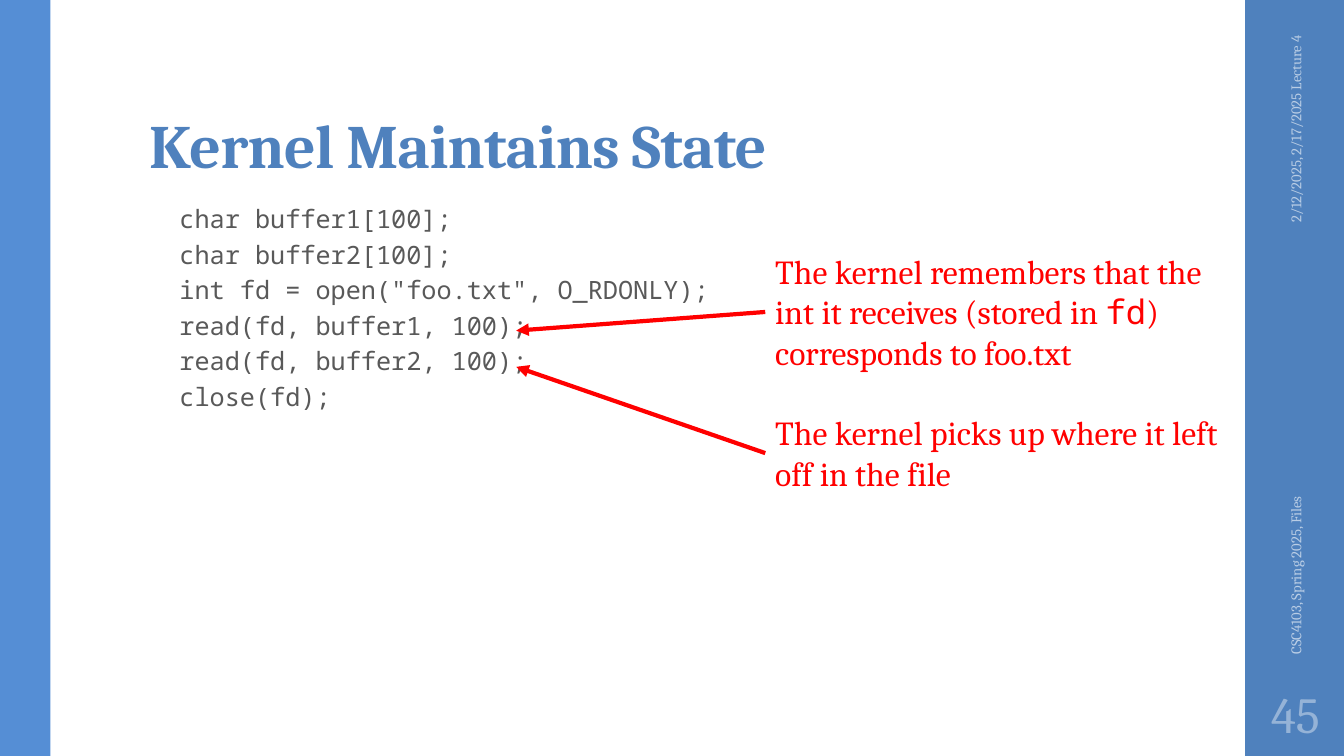
from lxml import etree
from pptx import Presentation
from pptx.dml.color import RGBColor
from pptx.enum.shapes import MSO_CONNECTOR, MSO_SHAPE
from pptx.enum.text import MSO_ANCHOR, MSO_AUTO_SIZE, PP_ALIGN
from pptx.oxml.ns import qn
from pptx.util import Pt

LEFT, CENTER, RIGHT = PP_ALIGN.LEFT, PP_ALIGN.CENTER, PP_ALIGN.RIGHT
TOP, MIDDLE, BOTTOM = MSO_ANCHOR.TOP, MSO_ANCHOR.MIDDLE, MSO_ANCHOR.BOTTOM
FIXED, GROW = MSO_AUTO_SIZE.NONE, MSO_AUTO_SIZE.SHAPE_TO_FIT_TEXT
RECTANGLE, STRAIGHT = MSO_SHAPE.RECTANGLE, MSO_CONNECTOR.STRAIGHT
LEFT_SIDE = 1
EMU_PER_PX = 9144

CODE = [
    "char buffer1[100];",
    "char buffer2[100];",
    'int fd = open("foo.txt", O_RDONLY);',
    "read(fd, buffer1, 100);",
    "read(fd, buffer2, 100);",
    "close(fd);",
]


def px(*lengths):
    return [length * EMU_PER_PX for length in lengths]


def color(value):
    return RGBColor.from_string(value)


class CodeSlide:
    """Holds the style and the current slide, and draws each kind of element."""

    serif = "Cambria"
    mono = "Noto Sans Mono"
    blue = "4F81BD"
    red = "FF0000"

    def __init__(self, deck):
        self.page = deck.slides.add_slide(deck.slide_layouts[1])

    def place(self, box, at):
        box.left, box.top, box.width, box.height = px(*at)

    def frame(self, box, anchor, insets=(10, 5, 10, 5), fit=FIXED):
        frame = box.text_frame
        frame.word_wrap = True
        frame.auto_size = fit
        frame.vertical_anchor = anchor
        (frame.margin_left, frame.margin_top,
         frame.margin_right, frame.margin_bottom) = px(*insets)
        return frame

    def style(self, span, size, ink, face=None):
        span.font.name = face or self.serif
        span.font.size = Pt(size)
        span.font.color.rgb = color(ink)

    def band(self, at, fill):
        box = self.page.shapes.add_shape(RECTANGLE, *px(*at))
        box.shadow.inherit = False
        box.fill.solid()
        box.fill.fore_color.rgb = color(fill)
        box.line.fill.background()

    def title(self, text, at):
        box = self.page.shapes.title
        self.place(box, at)
        frame = self.frame(box, BOTTOM, (10, 3, 10, 5))
        frame.text = text
        para = frame.paragraphs[0]
        para.alignment = LEFT
        para.line_spacing = 0.9
        span = para.runs[0]
        self.style(span, 44, self.blue)
        span.font.bold = True
        span.font._element.set("spc", "-50")

    def code(self, lines, at):
        box = self.page.placeholders[1]
        self.place(box, at)
        frame = self.frame(box, TOP)
        frame.text = "\n".join(lines)
        for para in frame.paragraphs:
            para.level = 1
            para.line_spacing = 0.9
            para.space_before = para.space_after = Pt(3)
            properties = para._p.get_or_add_pPr()
            properties.set("marL", str(px(30)[0]))
            properties.set("indent", "0")
            etree.SubElement(properties, qn("a:buNone"))
            self.style(para.runs[0], 18, "595959", self.mono)

    def label(self, text, at, size, ink, align=LEFT, rotation=0, insets=(10, 5, 10, 5)):
        box = self.page.shapes.add_textbox(*px(*at))
        box.rotation = rotation
        frame = self.frame(box, MIDDLE, insets)
        frame.text = text
        para = frame.paragraphs[0]
        para.alignment = align
        self.style(para.runs[0], size, ink)

    def note(self, parts, at, target):
        box = self.page.shapes.add_textbox(*px(*at))
        para = self.frame(box, TOP, fit=GROW).paragraphs[0]
        for text, face in parts:
            span = para.add_run()
            span.text = text
            self.style(span, 24, self.red, face)
        self.arrow(box, target)

    def arrow(self, box, target):
        line = self.page.shapes.add_connector(STRAIGHT, box.left, box.top, *px(*target))
        line.begin_connect(box, LEFT_SIDE)
        line.line.color.rgb = color(self.red)
        line.line.width = Pt(3)
        etree.SubElement(line.line._get_or_add_ln(), qn("a:tailEnd"), type="triangle")
        etree.SubElement(line._element.spPr, qn("a:effectLst"))


def main():
    deck = Presentation()
    deck.slide_width, deck.slide_height = px(1333, 750)
    slide = CodeSlide(deck)
    slide.band((1235, 0, 98, 750), slide.blue)
    slide.band((0, 0, 50, 750), "558ED5")
    slide.title("Kernel Maintains State", (138, 32, 1060, 153))
    slide.code(CODE, (138, 200, 940, 476))
    slide.label("2/12/2025, 2/17/2025 Lecture 4", (1181, 109, 208, 40),
                10.5, "B9CDE5", RIGHT, 270)
    slide.label("CSC4103, Spring 2025, Files", (1089, 443, 392, 40),
                10.5, "B9CDE5", rotation=270)
    slide.label("45", (1235, 675, 100, 65), 36, "95B3D7", CENTER, insets=(5, 5, 5, 5))
    slide.note([("The kernel remembers that the int it receives (stored in ", slide.serif),
                ("fd", slide.mono),
                (") corresponds to foo.txt", slide.serif)],
               (759, 244, 465, 131), (512, 328))
    slide.note([("The kernel picks up where it left off in the file", slide.serif)],
               (759, 404, 465, 91), (512, 364))
    deck.save("out.pptx")


if __name__ == "__main__":
    main()
